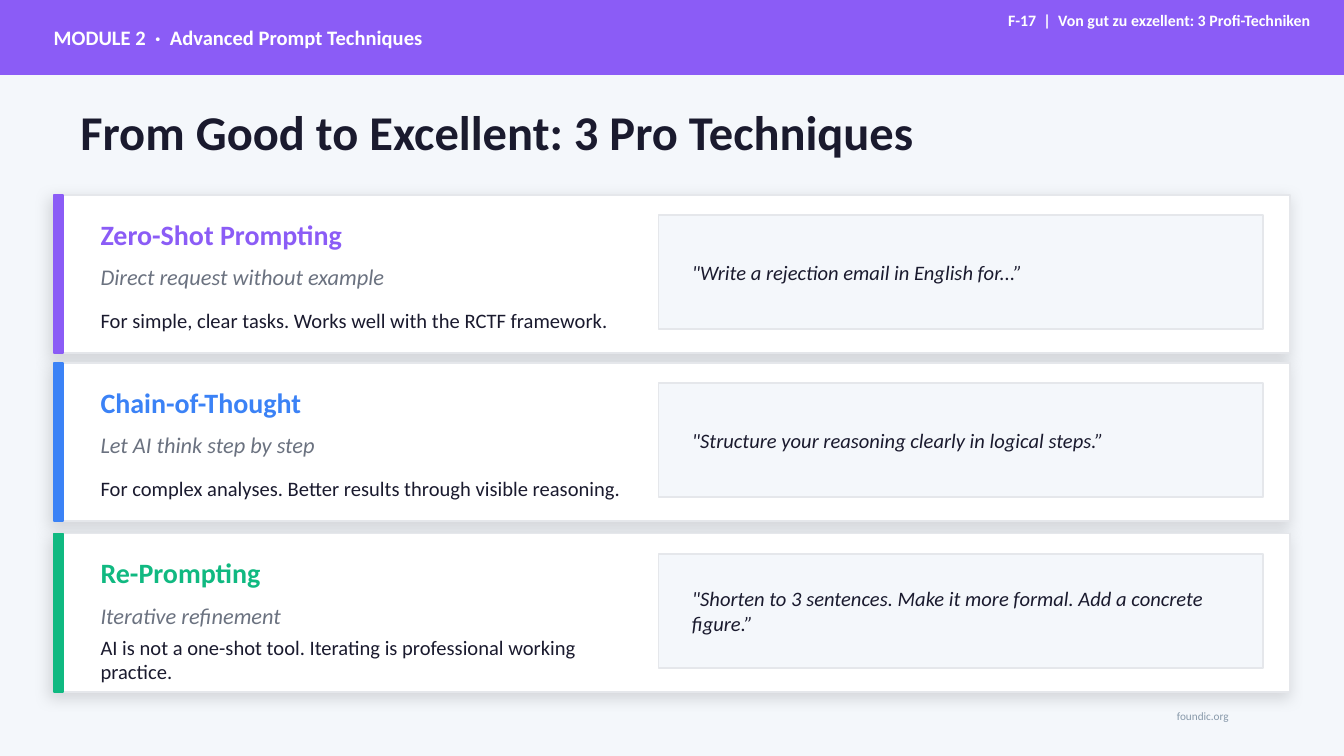
from lxml import etree
from pptx import Presentation
from pptx.dml.color import RGBColor
from pptx.enum.shapes import MSO_SHAPE
from pptx.enum.text import MSO_ANCHOR, PP_ALIGN
from pptx.oxml.ns import qn
from pptx.util import Inches, Pt

RECT = MSO_SHAPE.RECTANGLE
TOP, MIDDLE = MSO_ANCHOR.TOP, MSO_ANCHOR.MIDDLE
LEFT, RIGHT = PP_ALIGN.LEFT, PP_ALIGN.RIGHT
FONT = "Calibri"
SLIDE_W = 10
SLIDE_H = SLIDE_W * 9 / 16

# Content
MODULE = "MODULE 2  ·  Advanced Prompt Techniques"
CODE = "F-17  |  Von gut zu exzellent: 3 Profi-Techniken"
TITLE = "From Good to Excellent: 3 Pro Techniques"
FOOTER = "foundic.org"
# Card top, accent colour, name, summary, use, example
TECHNIQUES = [
    (1.45, "purple", "Zero-Shot Prompting", "Direct request without example",
     "For simple, clear tasks. Works well with the RCTF framework.",
     "\"Write a rejection email in English for...”"),
    (2.7, "blue", "Chain-of-Thought", "Let AI think step by step",
     "For complex analyses. Better results through visible reasoning.",
     "\"Structure your reasoning clearly in logical steps.”"),
    (3.97, "green", "Re-Prompting", "Iterative refinement",
     "AI is not a one-shot tool. Iterating is professional working practice.",
     "\"Shorten to 3 sentences. Make it more formal. Add a concrete figure.”"),
]

COLORS = {
    "page": "F4F7FB", "white": "FFFFFF", "ink": "1A1A2E", "gray": "6B7280",
    "border": "E5E7EB", "footer": "8899AA", "shadow": "000000",
    "purple": "8B5CF6", "blue": "3B82F6", "green": "10B981",
}

# Text formats
BANNER = {"size": Pt(11), "bold": True}
CODE_FORMAT = {"size": Pt(8.5), "bold": True}
HEADLINE = {"size": Pt(26), "bold": True}
NAME = {"size": Pt(15), "bold": True}
SUMMARY = {"size": Pt(12), "italic": True}
BODY = {"size": Pt(11)}
EXAMPLE = {"size": Pt(11), "italic": True}
SMALL = {"size": Pt(6)}


def rgb(name):
    return RGBColor.from_string(COLORS[name])


def add_rect(slide, x, y, w, h, fill, line):
    sp = slide.shapes.add_shape(RECT, Inches(x), Inches(y), Inches(w), Inches(h))
    sp.shadow.inherit = False
    sp.fill.solid()
    sp.fill.fore_color.rgb = rgb(fill)
    sp.line.color.rgb = rgb(line)
    sp.line.width = Pt(1)
    return sp


def add_shadow(sp):
    effects = sp._element.spPr.find(qn("a:effectLst"))
    shadow = etree.SubElement(
        effects, qn("a:outerShdw"), blurRad=str(Pt(8)), dist=str(Pt(3)),
        dir=str(135 * 60000), algn="bl", rotWithShape="0")
    color = etree.SubElement(shadow, qn("a:srgbClr"), val=COLORS["shadow"])
    etree.SubElement(color, qn("a:alpha"), val="12000")


def add_text(slide, x, y, w, h, text, color, font_format,
             align=LEFT, anchor=MIDDLE, wrap=True):
    box = slide.shapes.add_textbox(Inches(x), Inches(y), Inches(w), Inches(h))
    tf = box.text_frame
    tf.word_wrap = wrap
    tf.vertical_anchor = anchor
    p = tf.paragraphs[0]
    p.alignment = align
    r = p.add_run()
    r.text = text
    r.font.name = FONT
    r.font.color.rgb = rgb(color)
    for key, value in font_format.items():
        setattr(r.font, key, value)
    return tf


def add_card(slide, y, accent, name, summary, use, example):
    add_shadow(add_rect(slide, 0.4, y, 9.2, 1.18, "white", "border"))
    add_rect(slide, 0.4, y, 0.07, 1.18, accent, accent)
    add_text(slide, 0.65, y + 0.1, 4.5, 0.38, name, accent, NAME)
    add_text(slide, 0.65, y + 0.46, 4.5, 0.3, summary, "gray", SUMMARY)
    add_text(slide, 0.65, y + 0.76, 4.2, 0.35, use, "ink", BODY)
    add_rect(slide, 4.9, y + 0.15, 4.5, 0.85, "page", "border")
    add_text(slide, 5.05, y + 0.2, 4.15, 0.75, example, "ink", EXAMPLE)


def main():
    prs = Presentation()
    prs.slide_width, prs.slide_height = Inches(SLIDE_W), Inches(SLIDE_H)
    s = prs.slides.add_slide(prs.slide_layouts[6])
    s.background.fill.solid()
    s.background.fill.fore_color.rgb = rgb("page")

    # Banner and title
    add_rect(s, 0, 0, SLIDE_W, 0.55, "purple", "purple")
    tf = add_text(s, 0.4, 0, 9.2, 0.55, MODULE, "white", BANNER)
    for side in ("left", "top", "right", "bottom"):
        setattr(tf, f"margin_{side}", 0)
    add_text(s, 0.5, 0.65, 9, 0.65, TITLE, "ink", HEADLINE)

    # Technique cards
    for technique in TECHNIQUES:
        add_card(s, *technique)

    # Slide code and footer
    add_text(s, 5.05, 0.03, 4.8, 0.48, CODE, "white", CODE_FORMAT,
             align=RIGHT, anchor=TOP, wrap=False)
    add_text(s, 8.09, 5.17, 1.15, 0.31, FOOTER, "footer", SMALL, align=RIGHT)

    prs.save("out.pptx")


if __name__ == "__main__":
    main()
